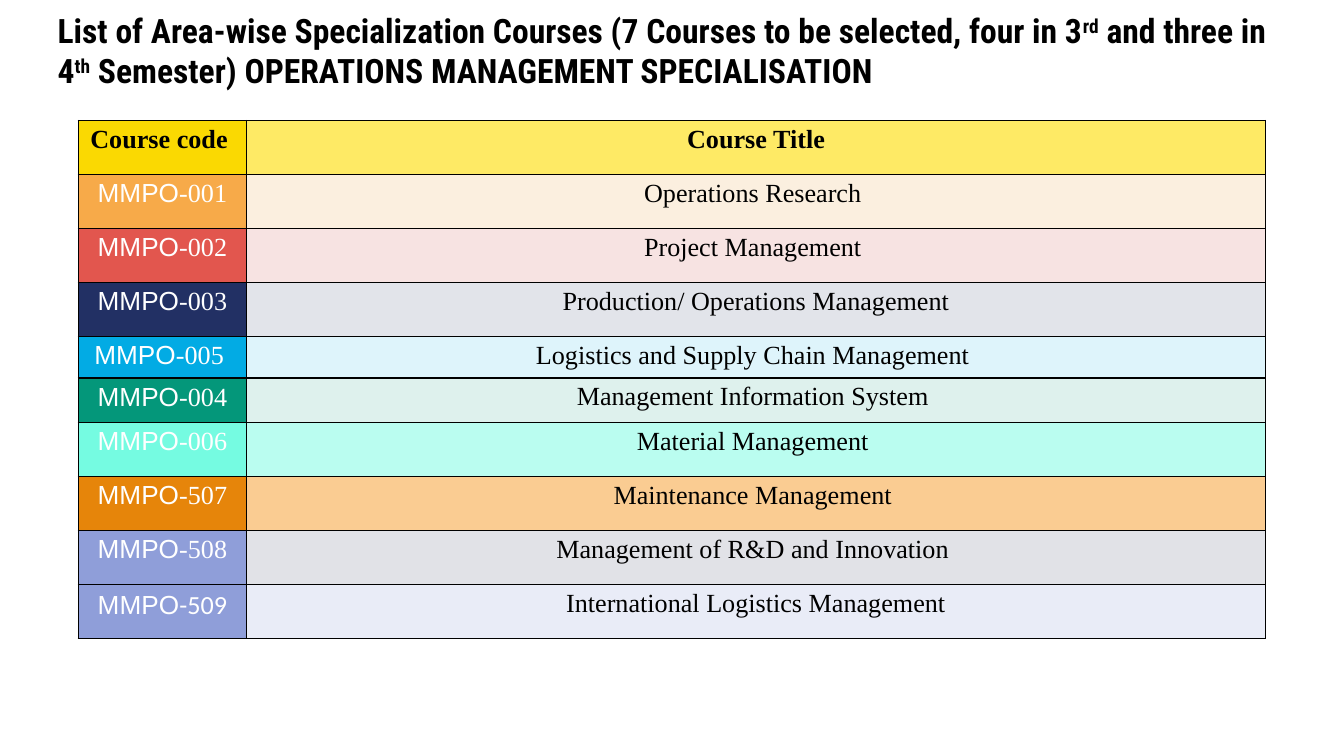
"""Build a slide that lists the operations management courses."""
from dataclasses import dataclass

from lxml import etree
from pptx import Presentation
from pptx.dml.color import RGBColor
from pptx.enum.text import MSO_ANCHOR, MSO_AUTO_SIZE, PP_ALIGN
from pptx.oxml.ns import qn
from pptx.slide import Slide
from pptx.table import _Cell
from pptx.text.text import _Paragraph
from pptx.util import Cm, Pt

LEFT, CENTER = PP_ALIGN.LEFT, PP_ALIGN.CENTER
MIDDLE = MSO_ANCHOR.MIDDLE
NO_FIT = MSO_AUTO_SIZE.NONE
WIDTHS = (3.18, 19.26)
EDGES = ("lnL", "lnR", "lnT", "lnB")
TALL = 1.02


@dataclass(frozen=True)
class Theme:
    black: str = "000000"
    white: str = "FFFFFF"
    gold: str = "FAD902"
    lemon: str = "FEEA65"
    title_font: str = "Roboto Condensed"
    serif: str = "Times New Roman"
    sans: str = "Arial"
    title_size: int = 18
    text_size: int = 14
    border: int = 1
    tint: int = 13


@dataclass(frozen=True)
class Course:
    number: str
    name: str
    code_fill: str
    name_fill: str
    clear: bool = True
    height: float = TALL
    font: str = "Times New Roman"


THEME = Theme()

COURSES = (
    Course("-001", "Operations Research ", "F7AA49", "E6850A"),
    Course("-002", "Project Management ", "E2564E", "C42920"),
    Course("-003", "Production/ Operations Management", "223064", "223064"),
    Course("-005 ", "Logistics and Supply Chain Management ", "02ABE4", "02ABE4", height=0.79),
    Course("-004", "Management Information System ", "04977A", "04977A", height=0.84),
    Course("-006", "Material Management ", "75FBE1", "BAFDF0", clear=False),
    Course("-507", "Maintenance Management ", "E6850A", "FACC92", clear=False),
    Course("-508", "Management of R&D and Innovation ", "8F9ED9", "1A244B"),
    Course("-509", "International Logistics Management", "8F9ED9", "576EC6", font="Calibri"),
)

TITLE = (
    ("List of Area-wise Specialization Courses (7 Courses to be selected, four in 3", False),
    ("rd", True),
    (" and three in 4", False),
    ("th", True),
    (" Semester) OPERATIONS MANAGEMENT SPECIALISATION", False),
)


def add_text(para: _Paragraph, text: str, *, font: str = THEME.serif,
             size: int = THEME.text_size, color: str = THEME.black,
             bold: bool = False, raised: bool = False) -> None:
    """Add one run of text in the given format."""
    run = para.add_run()
    run.text = text
    run.font.name, run.font.size, run.font.bold = font, Pt(size), bold
    run.font.color.rgb = RGBColor.from_string(color)
    if raised:
        run.font._element.set("baseline", "30000")


def add_child(parent, tag: str, **values: str):
    """Add a drawing element with its attributes."""
    return etree.SubElement(parent, qn(f"a:{tag}"), values)


def style_cell(cell: _Cell, fill: str, clear: bool = False) -> _Paragraph:
    """Fill and frame a cell, and return its paragraph."""
    cell.margin_left = cell.margin_right = Cm(0.18)
    cell.margin_top = cell.margin_bottom = 0
    cell.fill.solid()
    cell.fill.fore_color.rgb = RGBColor.from_string(fill)
    props = cell._tc.get_or_add_tcPr()
    if clear:
        add_child(props.find(".//" + qn("a:srgbClr")), "alpha", val=str(THEME.tint * 1000))
    for place, edge in enumerate(EDGES):
        line = add_child(props, edge, w=str(Pt(THEME.border)))
        add_child(add_child(line, "solidFill"), "srgbClr", val=THEME.black)
        props.insert(place, line)
    para = cell.text_frame.paragraphs[0]
    para.alignment, para.line_spacing = CENTER, 1.15
    return para


def draw_title(slide: Slide) -> None:
    """Place and fill the title."""
    title = slide.shapes.title
    title.left, title.top, title.width, title.height = Cm(0.84), Cm(0.05), Cm(23.93), Cm(1.8)
    frame = title.text_frame
    frame.word_wrap, frame.auto_size, frame.vertical_anchor = True, NO_FIT, MIDDLE
    frame.margin_left = frame.margin_right = Cm(0.25)
    frame.margin_top = frame.margin_bottom = Cm(0.25)
    para = frame.paragraphs[0]
    para.alignment = LEFT
    for text, raised in TITLE:
        add_text(para, text, font=THEME.title_font, size=THEME.title_size,
                 bold=True, raised=raised)


def draw_table(slide: Slide) -> None:
    """Draw the head row and one row for each course."""
    heights = [TALL] + [course.height for course in COURSES]
    table = slide.shapes.add_table(len(heights), len(WIDTHS), Cm(1.48), Cm(2.28),
                                   Cm(sum(WIDTHS)), Cm(sum(heights))).table
    table.first_row = table.horz_banding = False
    for column, width in zip(table.columns, WIDTHS):
        column.width = Cm(width)
    for row, height in zip(table.rows, heights):
        row.height = Cm(height)
    heads = (("Course code ", THEME.gold), ("Course Title", THEME.lemon))
    for place, (text, fill) in enumerate(heads):
        add_text(style_cell(table.cell(0, place), fill), text, bold=True)
    for place, course in enumerate(COURSES, 1):
        code = style_cell(table.cell(place, 0), course.code_fill)
        add_text(code, "MMPO", font=THEME.sans, color=THEME.white)
        add_text(code, course.number, font=course.font, color=THEME.white)
        name = style_cell(table.cell(place, 1), course.name_fill, course.clear)
        add_text(name, course.name)


def main() -> None:
    """Build and save the slide."""
    deck = Presentation()
    deck.slide_width, deck.slide_height = Cm(25.4), Cm(14.29)
    slide = deck.slides.add_slide(deck.slide_layouts[5])
    draw_title(slide)
    draw_table(slide)
    deck.save("out.pptx")


if __name__ == "__main__":
    main()
